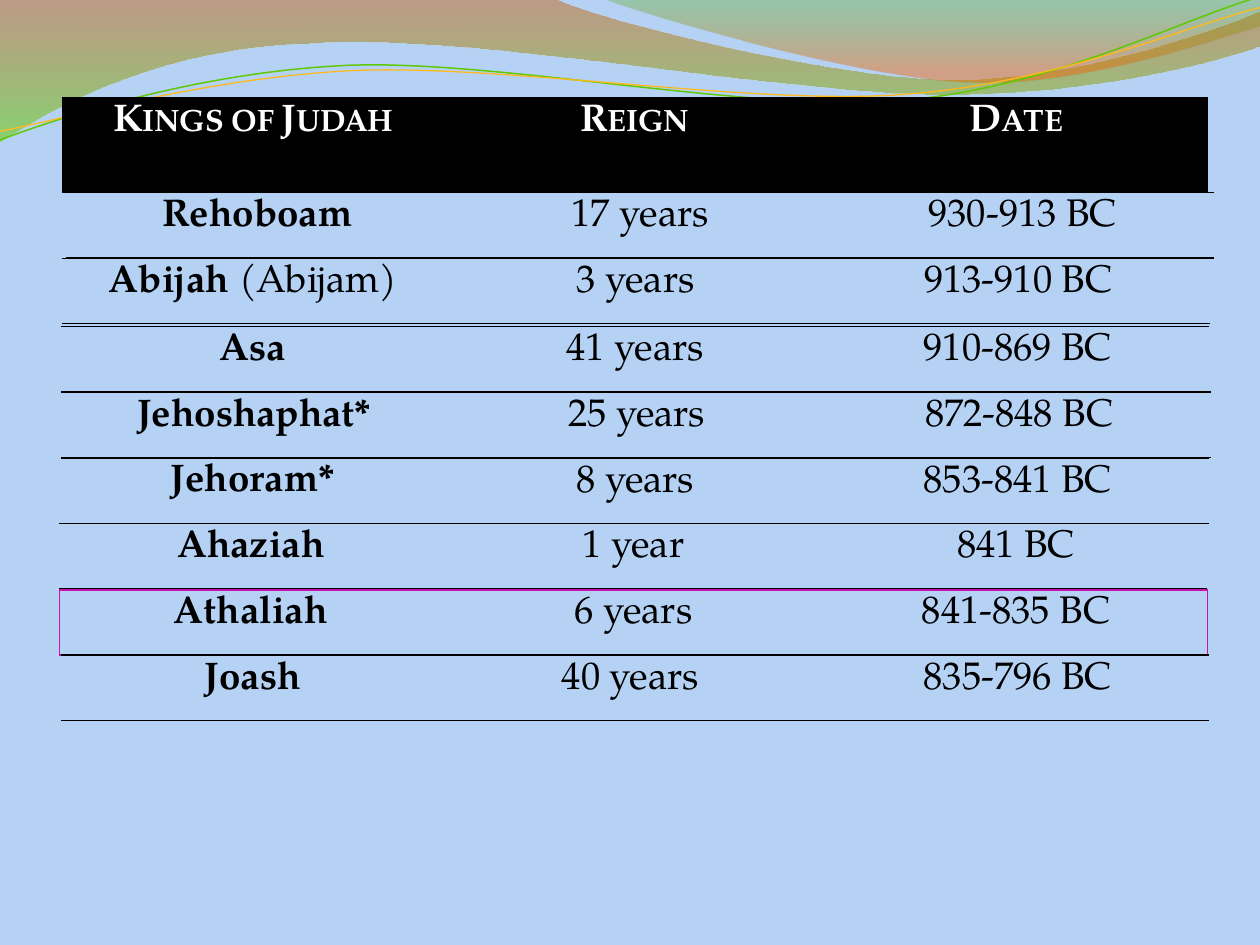
from math import cos, radians, sin

from lxml import etree
from pptx import Presentation
from pptx.dml.color import RGBColor
from pptx.enum.text import PP_ALIGN
from pptx.oxml.ns import qn
from pptx.util import Pt

MID = PP_ALIGN.CENTER
FONT = "TeX Gyre Pagella"
PLAIN = "{2D5ABB26-0587-4C30-8999-92F81FD0307C}"
SKY = RGBColor(0xB5, 0xD2, 0xF5)
BLACK = RGBColor(0, 0, 0)
WHITE = RGBColor(255, 255, 255)
PLUM = RGBColor(0xC9, 0x13, 0xAD)
RUST = RGBColor(0xC9, 0x56, 0x00)
LIME = RGBColor(0x63, 0xD2, 0x00)
GREEN = RGBColor(0x50, 0xAB, 0x00)
FLAME = RGBColor(0xF0, 0x67, 0x00)
LEAF = RGBColor(0x60, 0xC8, 0x04)
GOLD = RGBColor(0xFF, 0xB9, 0x1D)

WAVES = [
    ([(0, 0), (317, -0.7), (343, 12, 478, 45.4, 546, 45.4),
      (614, 45.4, 690, 19, 720, 6.5), (720.7, 26),
      (708, 32, 626, 55, 537, 54), (448, 54, 275, 20, 185, 24.5),
      (93, 26, 33, 60, -0.7, 81.4)],
     [(0, RUST, 45), (1, LIME, 55)]),
    ([(345, -0.7), (366, 8, 491, 45, 554, 47),
      (616, 49.7, 692, 23, 720, 15), (720, 0)],
     [(0, GREEN, 30), (0.8, FLAME, 45)]),
]
LINES = [
    ([(0, 80), (34.6, 67, 114, 41, 199, 37.4),
      (284, 34, 427, 64, 513, 57.6), (600, 51, 675, 11, 718.6, -1.4)],
     41.4, LEAF, 0.85),
    ([(0, 75), (34, 69, 118, 44, 204, 40.3),
      (290, 37, 433, 60.5, 516, 54), (602, 48, 678, 15, 720, 4.3)],
     42.5, GOLD, 0.75),
]
TILT = 2.7
HEAD = ("Kings of Judah", "Reign", "Date")
KINGS = [
    (37.8, 110, ("Rehoboam", "17 years", "930-913 BC")),
    (35.3, 147.6, ("Abijah |(Abijam)", "3 years", "913-910 BC")),
    (35, 186.5, ("Asa", "41 years", "910-869 BC")),
    (35.8, 224.1, ("Jehoshaphat*", "25 years", "872-848 BC")),
    (35, 261.6, ("Jehoram*", "8 years", "853-841 BC")),
    (34, 299.2, ("Ahaziah", "1 year", "841 BC")),
    (34, 337, ("Athaliah", "6 years", "841-835 BC")),
    (35, 374.4, ("Joash", "40 years ", "835-796 BC")),
]
BOXED = "Athaliah"

deck = Presentation()
deck.slide_width, deck.slide_height = Pt(720), Pt(540)
slide = deck.slides.add_slide(deck.slide_layouts[6])
slide.background.fill.solid()
slide.background.fill.fore_color.rgb = SKY


def turn(part, mid):
    c, s = cos(radians(TILT)), sin(radians(TILT))
    out = []
    for x, y in zip(part[::2], part[1::2]):
        x, y = x - 360, y - mid
        out += [360 + x * c - y * s, mid + x * s + y * c]
    return tuple(out)


def draw(parts, close):
    dots = [(Pt(x), Pt(y)) for p in parts for x, y in zip(p[::2], p[1::2])]
    pen = slide.shapes.build_freeform(*dots[0])
    pen.add_line_segments(dots[1:], close=close)
    shape = pen.convert_to_shape()
    shape.shadow.inherit = False
    legs = iter(list(shape._element.iter(qn("a:lnTo"))))
    for part in parts[1:]:
        first = next(legs)
        if len(part) == 6:
            first.tag = qn("a:cubicBezTo")
            for leg in (next(legs), next(legs)):
                first.append(leg[0])
                leg.getparent().remove(leg)
    return shape


def edge(cell, side, color, width):
    line = etree.SubElement(cell._tc.get_or_add_tcPr(), qn("a:ln" + side),
                            w=str(Pt(width)))
    fill = etree.SubElement(line, qn("a:solidFill"))
    etree.SubElement(fill, qn("a:srgbClr"), val=str(color))


def band(x, y, wide, high, texts, head=False):
    frame = slide.shapes.add_table(1, 3, Pt(x), Pt(y), Pt(wide), Pt(high))
    grid = frame.table
    grid._tbl.tblPr.find(qn("a:tableStyleId")).text = PLAIN
    boxed = texts[0] == BOXED
    for i, text in enumerate(texts):
        cell = grid.cell(0, i)
        sides = "TB"
        if head or boxed:
            sides = ("L", "", "R")[i] + sides
        for side in sides:
            edge(cell, side, PLUM if boxed else BLACK, 0.75 if head else 1)
        if head:
            cell.fill.solid()
            cell.fill.fore_color.rgb = BLACK
        else:
            cell.fill.background()
        para = cell.text_frame.paragraphs[0]
        para.alignment = MID
        for j, piece in enumerate(text.split("|")):
            run = para.add_run()
            run.text = piece
            font = run.font
            font.name, font.size = FONT, Pt(22)
            font.bold = head or i + j == 0
            font.color.rgb = WHITE if head else BLACK
            if head:
                run._r.get_or_add_rPr().set("cap", "small")


for parts, stops in WAVES:
    wave = draw(parts, True)
    wave.line.fill.background()
    wave.fill.gradient()
    wave.fill.gradient_angle = 270
    for stop, (pos, color, _) in zip(wave.fill.gradient_stops, stops):
        stop.position = pos
        stop.color.rgb = color
    tints = wave._element.spPr.find(qn("a:gradFill")).iter(qn("a:srgbClr"))
    for tint, (_, _, alpha) in zip(tints, stops):
        etree.SubElement(tint, qn("a:alpha"), val=str(alpha * 1000))

for parts, mid, color, width in LINES:
    line = draw([turn(part, mid) for part in parts], False)
    line.rotation = 360 - TILT
    line.fill.background()
    line.line.color.rgb = color
    line.line.width = Pt(width)

band(35.7, 55.6, 654.2, 54.6, HEAD, True)
for x, y, texts in KINGS:
    band(x, y, 656, 37.4, texts)

deck.save("out.pptx")
